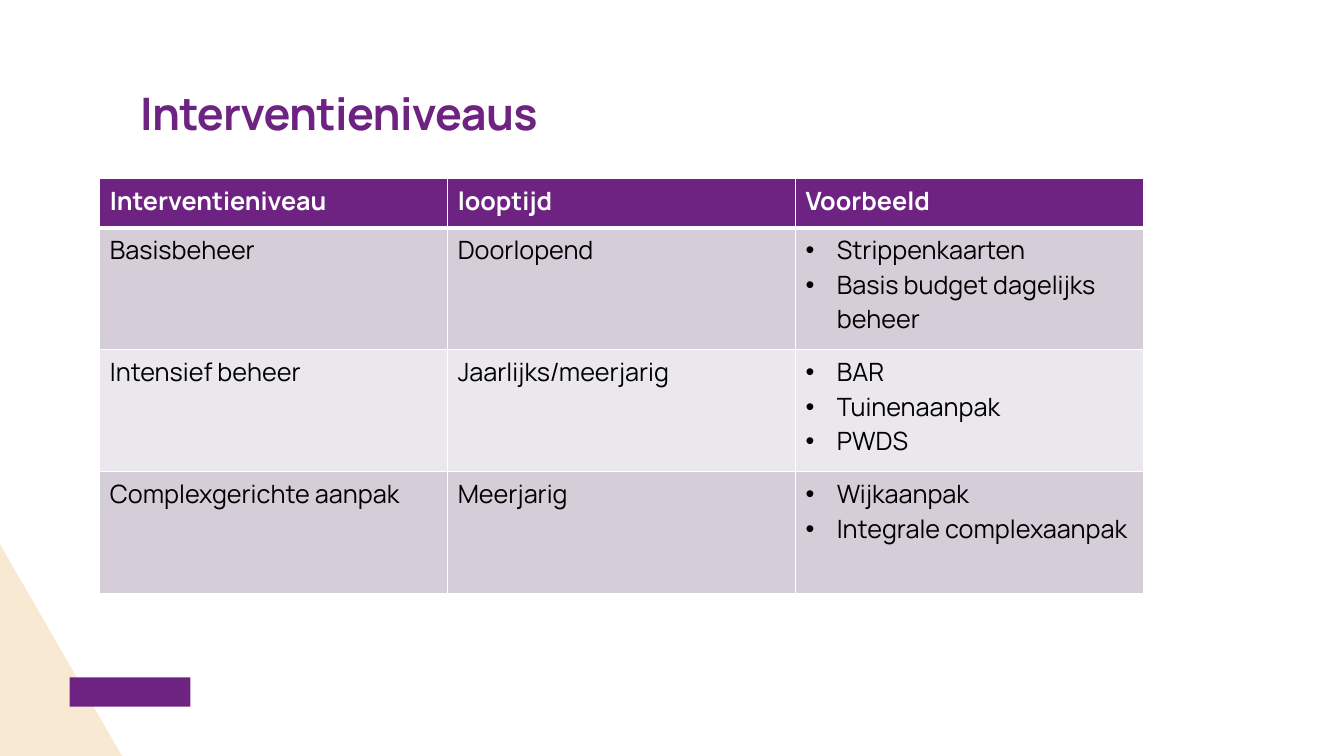
from lxml import etree
from pptx import Presentation
from pptx.dml.color import RGBColor
from pptx.enum.shapes import MSO_SHAPE
from pptx.enum.text import MSO_ANCHOR, MSO_AUTO_SIZE, PP_ALIGN
from pptx.oxml.ns import qn
from pptx.util import Inches, Pt

LEFT = PP_ALIGN.LEFT
TOP = MSO_ANCHOR.TOP
NO_FIT = MSO_AUTO_SIZE.NONE
RECTANGLE = MSO_SHAPE.RECTANGLE

COLORS = {
    "purple": "6E2382",
    "sand": "F8E9D3",
    "white": "FFFFFF",
    "black": "000000",
    "dark_band": "D5CDD8",
    "light_band": "EBE8ED",
}


def rgb(name):
    return RGBColor.from_string(COLORS[name])


def write(frame, text, size=18, color="black", bold=False, bullet=False,
          line_spacing=None, tracking=None):
    for index, line in enumerate(text.split("\n")):
        paragraph = frame.add_paragraph() if index else frame.paragraphs[0]
        paragraph.alignment = LEFT
        if line_spacing:
            paragraph.line_spacing = line_spacing
        if bullet:
            properties = paragraph._p.get_or_add_pPr()
            properties.set("marL", str(Inches(0.31)))
            properties.set("indent", str(-Inches(0.31)))
            etree.SubElement(properties, qn("a:buFont"), typeface="Arial")
            etree.SubElement(properties, qn("a:buChar"), char="•")
        run = paragraph.add_run()
        run.text = line
        run.font.name = "Manrope"
        run.font.size = Pt(size)
        run.font.bold = bold
        run.font.color.rgb = rgb(color)
        if tracking:
            run._r.get_or_add_rPr().set("spc", str(tracking))


prs = Presentation()
prs.slide_width = Inches(13.33)
prs.slide_height = Inches(7.5)
slide = prs.slides.add_slide(prs.slide_layouts[5])

corner_builder = slide.shapes.build_freeform(0, Inches(5.4))
corner_builder.add_line_segments(
    [(Inches(1.21), Inches(7.5)), (0, Inches(7.5))], close=True)
corner = corner_builder.convert_to_shape()
brand_block = slide.shapes.add_shape(
    RECTANGLE, Inches(0.69), Inches(6.72), Inches(1.2), Inches(0.29))
for decoration, color in ((corner, "sand"), (brand_block, "purple")):
    decoration.shadow.inherit = False
    decoration.fill.solid()
    decoration.fill.fore_color.rgb = rgb(color)
    decoration.line.fill.background()

title = slide.shapes.title
title.left, title.top = Inches(1.39), Inches(0.78)
title.width, title.height = Inches(9.8), Inches(1.16)
heading = title.text_frame
heading.margin_left = heading.margin_right = 0
heading.margin_top = heading.margin_bottom = 0
heading.vertical_anchor = TOP
heading.auto_size = NO_FIT
heading.word_wrap = True
write(heading, "Interventieniveaus", size=32, color="purple", bold=True,
      line_spacing=1.14, tracking=-50)

levels = [
    ("Interventieniveau", "looptijd", "Voorbeeld"),
    ("Basisbeheer", "Doorlopend", "Strippenkaarten\nBasis budget dagelijks beheer"),
    ("Intensief beheer", "Jaarlijks/meerjarig", "BAR\nTuinenaanpak\nPWDS"),
    ("Complexgerichte aanpak", "Meerjarig", "Wijkaanpak\nIntegrale complexaanpak"),
]
row_fills = ["purple", "dark_band", "light_band", "dark_band"]
row_heights = [0.49, 1.21, 1.21, 1.21]

table = slide.shapes.add_table(
    len(levels), 3, Inches(0.99), Inches(1.77), Inches(10.34), Inches(4.12)).table
for column in table.columns:
    column.width = Inches(3.45)

for row, level in enumerate(levels):
    table.rows[row].height = Inches(row_heights[row])
    is_header = row == 0
    border_widths = {
        "a:lnL": 1,
        "a:lnR": 1,
        "a:lnT": 3 if row == 1 else 1,
        "a:lnB": 3 if is_header else 1,
    }
    for col, text in enumerate(level):
        cell = table.cell(row, col)
        cell_properties = cell._tc.get_or_add_tcPr()
        for side, width in border_widths.items():
            border = etree.SubElement(cell_properties, qn(side), w=str(Pt(width)))
            border_fill = etree.SubElement(border, qn("a:solidFill"))
            etree.SubElement(border_fill, qn("a:srgbClr"), val=COLORS["white"])
        cell.fill.solid()
        cell.fill.fore_color.rgb = rgb(row_fills[row])
        write(cell.text_frame, text, color="white" if is_header else "black",
              bold=is_header, bullet=col == 2 and not is_header)

prs.save("out.pptx")
